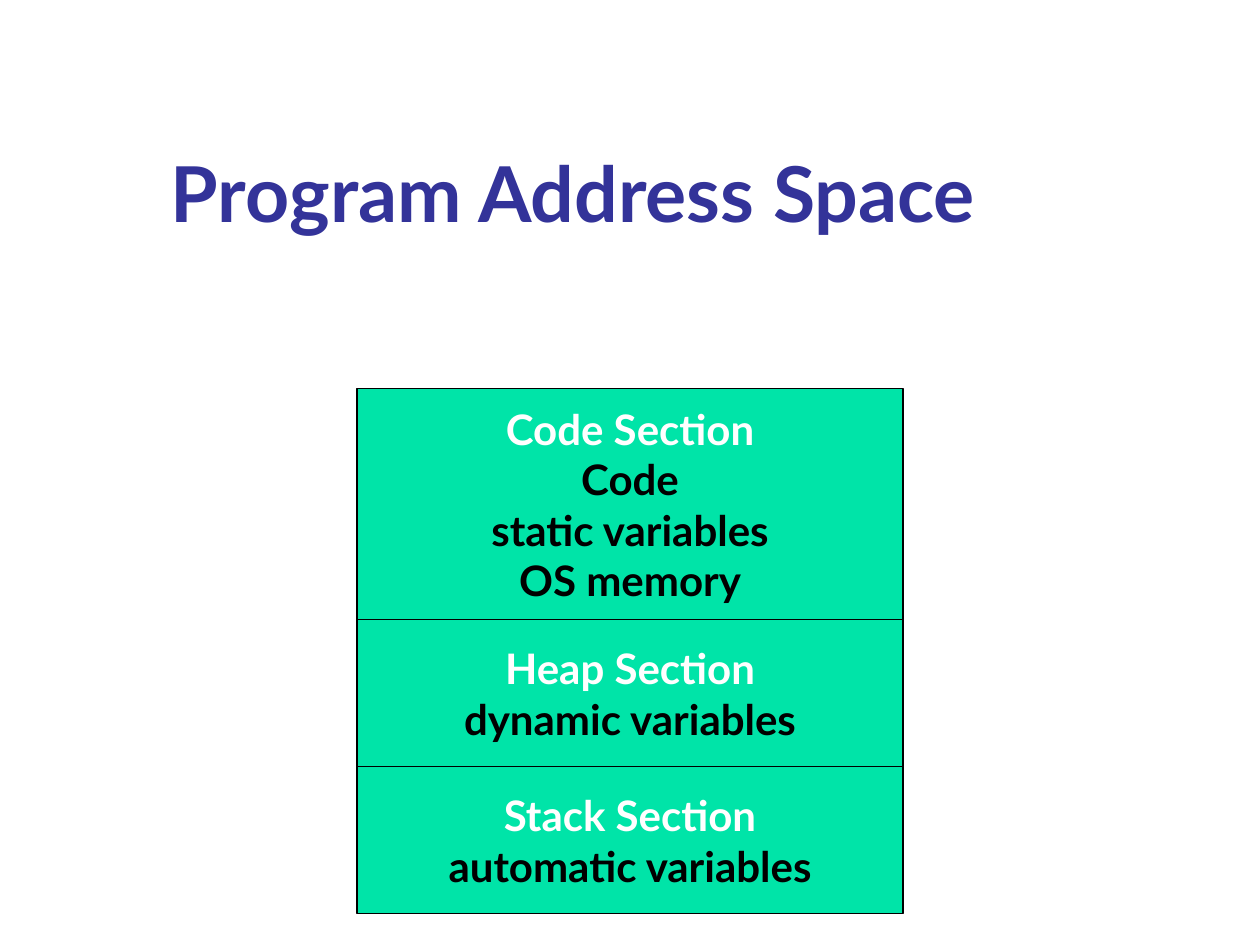
import pptx
import pptx.util
import pptx.dml.color
import pptx.enum.shapes
import pptx.enum.text

INDIGO = pptx.dml.color.RGBColor(0x33, 0x33, 0x99)
GREEN = pptx.dml.color.RGBColor(0x00, 0xE4, 0xA8)
WHITE = pptx.dml.color.RGBColor(0xFF, 0xFF, 0xFF)
BLACK = pptx.dml.color.RGBColor(0x00, 0x00, 0x00)

FONT = "Lato"
CELL = pptx.util.Inches(1 / 12)  # the slide is 120 columns by 90 rows
COLUMNS, ROWS = 120, 90

# Height in rows, then the heading and the contents of each section
SECTIONS = [
    (22, ["Code Section", "Code", "static variables", "OS memory"]),
    (14, ["Heap Section", "dynamic variables"]),
    (14, ["Stack Section", "automatic variables"]),
]


def to_length(cells):
    return round(cells * CELL)


def format_paragraph(paragraph, size, color, alignment):
    paragraph.alignment = alignment
    for span in paragraph.runs:
        span.font.name = FONT
        span.font.size = pptx.util.Pt(size)
        span.font.bold = True
        span.font.color.rgb = color


def add_title(page, left, top, width, height, text):
    box = page.shapes.add_textbox(*map(to_length, (left, top, width, height)))
    frame = box.text_frame
    frame.word_wrap = True
    frame.vertical_anchor = pptx.enum.text.MSO_ANCHOR.BOTTOM
    frame.text = text
    format_paragraph(frame.paragraphs[0], 44, INDIGO, pptx.enum.text.PP_ALIGN.LEFT)


def add_section(page, left, top, width, height, lines):
    """Draw one memory section, with its heading in white."""
    box = page.shapes.add_shape(
        pptx.enum.shapes.MSO_SHAPE.RECTANGLE,
        *map(to_length, (left, top, width, height)))
    box.shadow.inherit = False
    box.fill.solid()
    box.fill.fore_color.rgb = GREEN
    box.line.color.rgb = BLACK
    box.line.width = pptx.util.Pt(0.75)
    frame = box.text_frame
    frame.word_wrap = False
    frame.vertical_anchor = pptx.enum.text.MSO_ANCHOR.MIDDLE
    frame.text = "\n".join(lines)
    for index, paragraph in enumerate(frame.paragraphs):
        color = WHITE if index == 0 else BLACK
        format_paragraph(paragraph, 24, color, pptx.enum.text.PP_ALIGN.CENTER)


def add_address_space(page, left, top, width, sections):
    """Stack the memory sections downwards without gaps."""
    for height, lines in sections:
        add_section(page, left, top, width, height, lines)
        top += height


def main():
    deck = pptx.Presentation()
    deck.slide_width = to_length(COLUMNS)
    deck.slide_height = to_length(ROWS)
    page = deck.slides.add_slide(deck.slide_layouts[6])
    add_title(page, 15.1, 8.2, 102.2, 15, "Program Address Space")
    add_address_space(page, 34, 37, 52, SECTIONS)
    deck.save("out.pptx")


if __name__ == "__main__":
    main()
